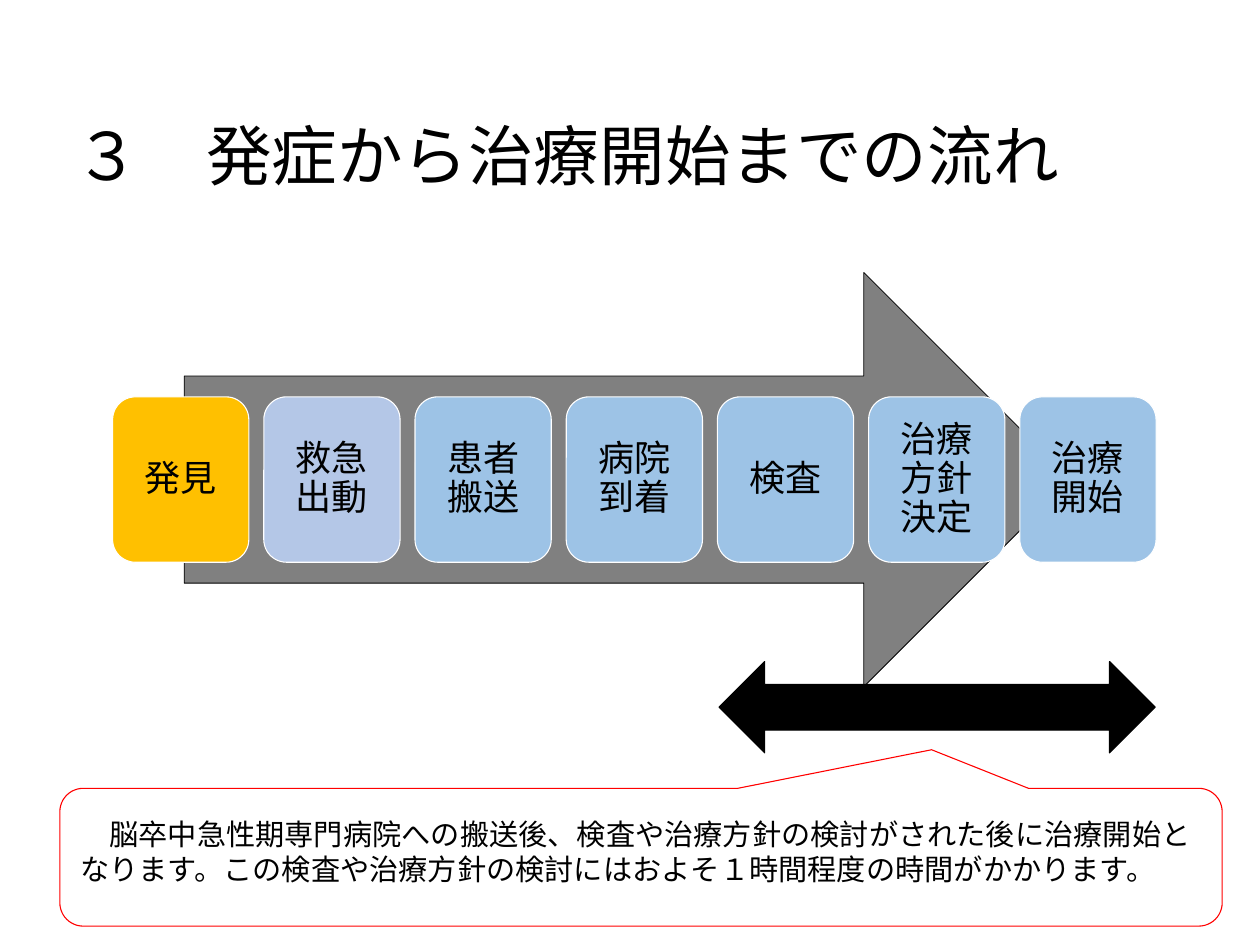
"""Build the slide on the flow from onset of symptoms to start of treatment."""
from dataclasses import dataclass
from typing import Optional

from pptx import Presentation
from pptx.dml.color import RGBColor
from pptx.enum.shapes import MSO_SHAPE
from pptx.enum.text import MSO_ANCHOR, PP_ALIGN
from pptx.shapes.autoshape import Shape
from pptx.slide import Slide
from pptx.util import Inches, Pt

BLACK = RGBColor(0x00, 0x00, 0x00)
WHITE = RGBColor(0xFF, 0xFF, 0xFF)
GREY = RGBColor(0x80, 0x80, 0x80)
AMBER = RGBColor(0xFF, 0xC0, 0x00)
LAVENDER = RGBColor(0xB4, 0xC7, 0xE7)
BLUE = RGBColor(0x9D, 0xC3, 0xE6)
RED = RGBColor(0xFF, 0x00, 0x00)

FONT = "Calibri"
SLIDE_WIDTH, SLIDE_HEIGHT = Inches(16.01), Inches(12.01)
COLUMN, ROW = SLIDE_WIDTH / 16, SLIDE_HEIGHT / 12


@dataclass(frozen=True)
class Area:
    """A rectangle in grid columns and rows."""

    left: float
    top: float
    width: float
    height: float

    def lengths(self) -> tuple[int, int, int, int]:
        """Return left, top, width and height in slide units."""
        return (round(self.left * COLUMN), round(self.top * ROW),
                round(self.width * COLUMN), round(self.height * ROW))


@dataclass(frozen=True)
class Step:
    """One stage between discovery and treatment."""

    label: str
    fill: RGBColor = BLUE


STEPS = (
    Step("発見", AMBER),
    Step("救急出動", LAVENDER),
    Step("患者搬送"),
    Step("病院到着"),
    Step("検査"),
    Step("治療方針決定"),
    Step("治療開始"),
)
FIRST_STEP = Area(1.43, 5.04, 1.73, 2.1)
STEP_PITCH = 1.92


def write(shape: Shape, text: str, size: float, margins: tuple[float, float],
          anchor: MSO_ANCHOR = MSO_ANCHOR.MIDDLE,
          align: PP_ALIGN = PP_ALIGN.LEFT, spacing: float = 1.0) -> None:
    """Fill a shape with one paragraph of wrapped black text."""
    frame = shape.text_frame
    frame.text = text
    frame.word_wrap = True
    frame.vertical_anchor = anchor
    frame.margin_left = frame.margin_right = Inches(margins[0])
    frame.margin_top = frame.margin_bottom = Inches(margins[1])
    para = frame.paragraphs[0]
    para.alignment = align
    para.line_spacing = spacing
    font = para.runs[0].font
    font.name, font.size = FONT, Pt(size)
    font.color.rgb = BLACK


def draw(page: Slide, kind: MSO_SHAPE, area: Area, fill: Optional[RGBColor],
         line: RGBColor, weight: float = 1) -> Shape:
    """Add a flat preset shape, left hollow when no fill is given."""
    shape = page.shapes.add_shape(kind, *area.lengths())
    shape.shadow.inherit = False
    if fill is None:
        shape.fill.background()
    else:
        shape.fill.solid()
        shape.fill.fore_color.rgb = fill
    shape.line.color.rgb = line
    shape.line.width = Pt(weight)
    return shape


def draw_steps(page: Slide) -> None:
    """Draw the flow arrow and the evenly spaced steps on it."""
    draw(page, MSO_SHAPE.RIGHT_ARROW, Area(2.34, 3.46, 11.26, 5.26), GREY, BLACK, 0.75)
    for index, step in enumerate(STEPS):
        area = Area(FIRST_STEP.left + index * STEP_PITCH, FIRST_STEP.top,
                    FIRST_STEP.width, FIRST_STEP.height)
        box = draw(page, MSO_SHAPE.ROUNDED_RECTANGLE, area, step.fill, WHITE)
        write(box, step.label, 33, (0.14, 0.14), align=PP_ALIGN.CENTER, spacing=0.9)


def draw_explanation(page: Slide) -> None:
    """Draw the note, the span it covers and its callout outline."""
    note = page.shapes.add_textbox(*Area(0.92, 10.32, 14.6, 1.41).lengths())
    write(note, "\u3000脳卒中急性期専門病院への搬送後、検査や治療方針の検討がされた後に"
          "治療開始となります。この検査や治療方針の検討にはおよそ１時間程度の時間がかかります。"
          .replace("\u3000", "　"), 26.7, (0.1, 0.05), MSO_ANCHOR.TOP)
    draw(page, MSO_SHAPE.LEFT_RIGHT_ARROW, Area(9.13, 8.4, 5.54, 1.16), BLACK, BLACK)
    callout = draw(page, MSO_SHAPE.ROUNDED_RECTANGULAR_CALLOUT,
                   Area(0.76, 10.01, 14.76, 1.75), None, RED)
    for index, value in enumerate((0.25, -0.78, 0.17)):
        callout.adjustments[index] = value


def main() -> None:
    """Build and save the deck."""
    deck = Presentation()
    deck.slide_width, deck.slide_height = SLIDE_WIDTH, SLIDE_HEIGHT
    page = deck.slides.add_slide(deck.slide_layouts[6])
    title = page.shapes.add_textbox(*Area(0.76, 1.2, 13.07, 1.51).lengths())
    write(title, "３　発症から治療開始までの流れ", 60, (0.19, 0.1))
    draw_steps(page)
    draw_explanation(page)
    deck.save("out.pptx")


if __name__ == "__main__":
    main()
